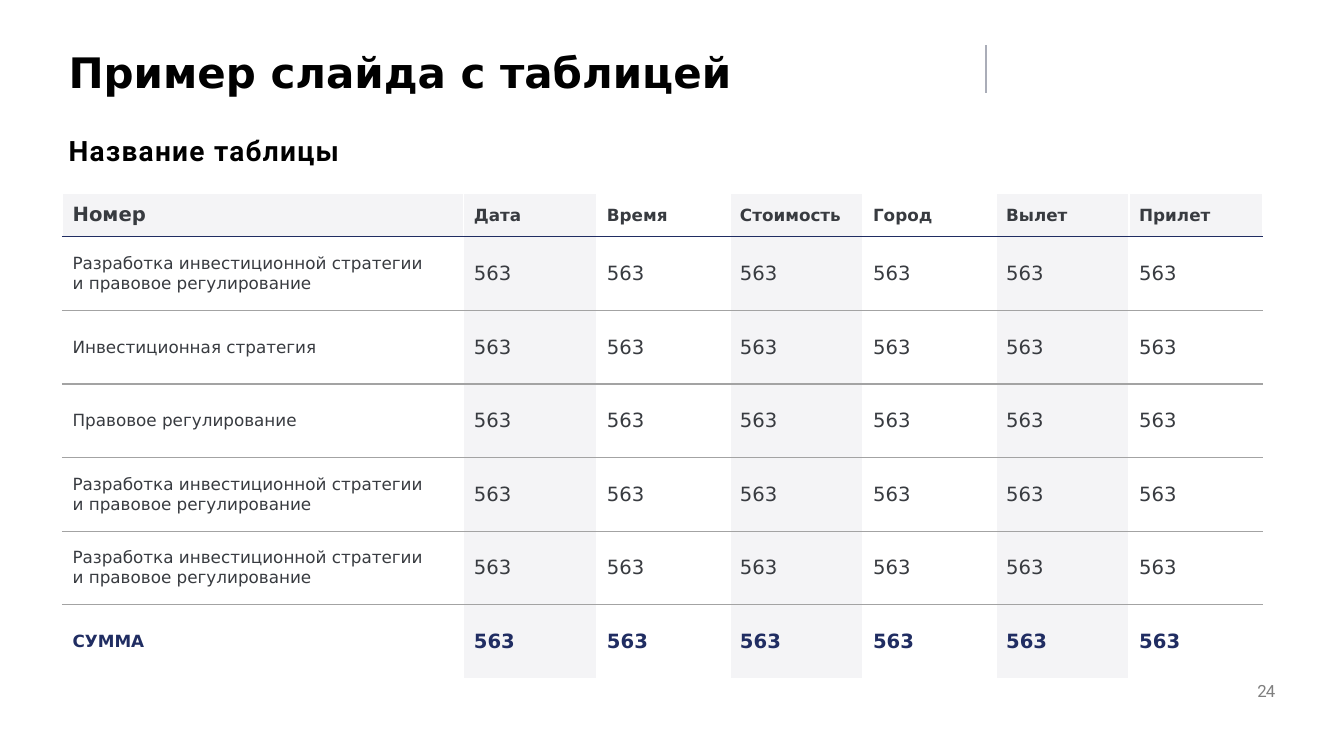
from copy import deepcopy
from dataclasses import dataclass

from lxml import etree
from pptx import Presentation
from pptx import util as u
from pptx.dml.color import RGBColor
from pptx.enum import shapes, text
from pptx.oxml.ns import qn
from pptx.shapes.base import BaseShape
from pptx.table import _Cell
from pptx.text.text import TextFrame

EMU_PER_PX = 9144


@dataclass(frozen=True)
class Theme:
    sans: str = "DejaVu Sans"
    accent_sans: str = "Roboto"
    black: str = "000000"
    ink: str = "383B40"
    navy: str = "202D62"
    page_grey: str = "7F7F7F"
    divider: str = "AAADB8"
    rule: str = "A3A3A3"
    stripe: str = "F4F4F6"
    white: str = "FFFFFF"
    title_size: int = 30
    caption_size: int = 20
    value_size: int = 14
    small_size: int = 12


@dataclass(frozen=True)
class Box:
    left: int
    top: int
    width: int
    height: int


@dataclass(frozen=True)
class TableRow:
    label: str
    values: tuple[str, ...]
    height: int = 73
    label_size: int = Theme.small_size
    value_size: int = Theme.value_size
    color: str = Theme.ink
    bold: bool = False
    rule_below: str = Theme.rule
    striped: tuple[int, ...] = (1, 3, 5)


THEME = Theme()
VALUES = ("563",) * 6
STRATEGY = "Разработка инвестиционной стратегии \vи правовое регулирование"
ROWS = (
    TableRow("Номер", ("Дата", "Время", "Стоимость", "Город", "Вылет", "Прилет"),
             height=43, label_size=THEME.value_size, value_size=THEME.small_size,
             bold=True, rule_below=THEME.navy, striped=(0, 1, 3, 5, 6)),
    TableRow(STRATEGY, VALUES),
    TableRow("Инвестиционная стратегия", VALUES),
    TableRow("Правовое регулирование", VALUES),
    TableRow(STRATEGY, VALUES),
    TableRow(STRATEGY, VALUES),
    TableRow("СУММА", VALUES, color=THEME.navy, bold=True, rule_below=THEME.white),
)
COLUMN_WIDTHS = (398,) + (132,) * 6


def px(length: int) -> u.Emu:
    return u.Emu(length * EMU_PER_PX)


def write(frame: TextFrame, words: str, *, size: int, color: str,
          font: str = THEME.sans, bold: bool = False, spacing: float = 0) -> None:
    paragraph = frame.paragraphs[0]
    paragraph.text = words
    paragraph.alignment = text.PP_ALIGN.LEFT
    for run in paragraph.runs:
        run.font.name = font
        run.font.size = u.Pt(size)
        run.font.bold = bold
        run.font.color.rgb = RGBColor.from_string(color)
        if spacing:
            run._r.get_or_add_rPr().set("spc", str(round(spacing * 100)))
    for line_break in paragraph._p.findall(qn("a:br")):
        line_break.insert(0, deepcopy(paragraph.runs[0]._r.rPr))


def set_frame(shape: BaseShape, box: Box) -> TextFrame:
    """Places a text shape and gives it the slide's tight margins."""
    shape.left, shape.top = px(box.left), px(box.top)
    shape.width, shape.height = px(box.width), px(box.height)
    frame = shape.text_frame
    frame.word_wrap = True
    frame.auto_size = text.MSO_AUTO_SIZE.NONE
    frame.vertical_anchor = text.MSO_ANCHOR.TOP
    frame.margin_left = frame.margin_right = frame.margin_bottom = 0
    frame.margin_top = px(2)
    return frame


def set_borders(cell: _Cell, above: str, below: str) -> None:
    properties = cell._tc.get_or_add_tcPr()
    sides = {"lnL": THEME.white, "lnR": THEME.white, "lnT": above, "lnB": below}
    for side, color in sides.items():
        line = etree.SubElement(properties, qn(f"a:{side}"), w=str(u.Pt(1)))
        fill = etree.SubElement(line, qn("a:solidFill"))
        etree.SubElement(fill, qn("a:srgbClr"), val=color)


def add_schedule(slide, left: int, top: int) -> None:
    frame = slide.shapes.add_table(
        len(ROWS), len(COLUMN_WIDTHS), px(left), px(top),
        px(sum(COLUMN_WIDTHS)), px(sum(row.height for row in ROWS)))
    table = frame.table
    table.horz_banding = False
    for column, width in zip(table.columns, COLUMN_WIDTHS):
        column.width = px(width)
    above = THEME.white
    for r, row in enumerate(ROWS):
        table.rows[r].height = px(row.height)
        for c, words in enumerate((row.label, *row.values)):
            cell = table.cell(r, c)
            cell.vertical_anchor = text.MSO_ANCHOR.MIDDLE
            set_borders(cell, above, row.rule_below)
            cell.fill.solid()
            cell.fill.fore_color.rgb = RGBColor.from_string(
                THEME.stripe if c in row.striped else THEME.white)
            write(cell.text_frame, words, color=row.color, bold=row.bold,
                  size=row.value_size if c else row.label_size)
        above = row.rule_below


def add_divider(slide, x: int, top: int, bottom: int) -> None:
    divider = slide.shapes.add_connector(
        shapes.MSO_CONNECTOR.STRAIGHT, px(x), px(top), px(x), px(bottom))
    divider.line.color.rgb = RGBColor.from_string(THEME.divider)
    divider.line.width = u.Pt(1)
    etree.SubElement(divider._element.spPr, qn("a:effectLst"))


def main() -> None:
    deck = Presentation()
    deck.slide_width, deck.slide_height = px(1333), px(750)
    slide = deck.slides.add_slide(deck.slide_layouts[5])

    title = set_frame(slide.shapes.title, Box(68, 44, 684, 52))
    write(title, "Пример слайда с таблицей", size=THEME.title_size,
          color=THEME.black, bold=True)
    add_divider(slide, 978, 45, 92)

    caption = set_frame(slide.shapes.add_textbox(0, 0, 0, 0), Box(68, 130, 357, 35))
    write(caption, "Название таблицы", size=THEME.caption_size, color=THEME.black,
          font=THEME.accent_sans, bold=True, spacing=0.9)

    add_schedule(slide, 62, 192)

    page_number = set_frame(slide.shapes.add_textbox(0, 0, 0, 0), Box(1247, 673, 22, 23))
    write(page_number, "24", size=THEME.small_size, color=THEME.page_grey,
          font=THEME.accent_sans, spacing=-0.5)

    deck.save("out.pptx")


if __name__ == "__main__":
    main()
